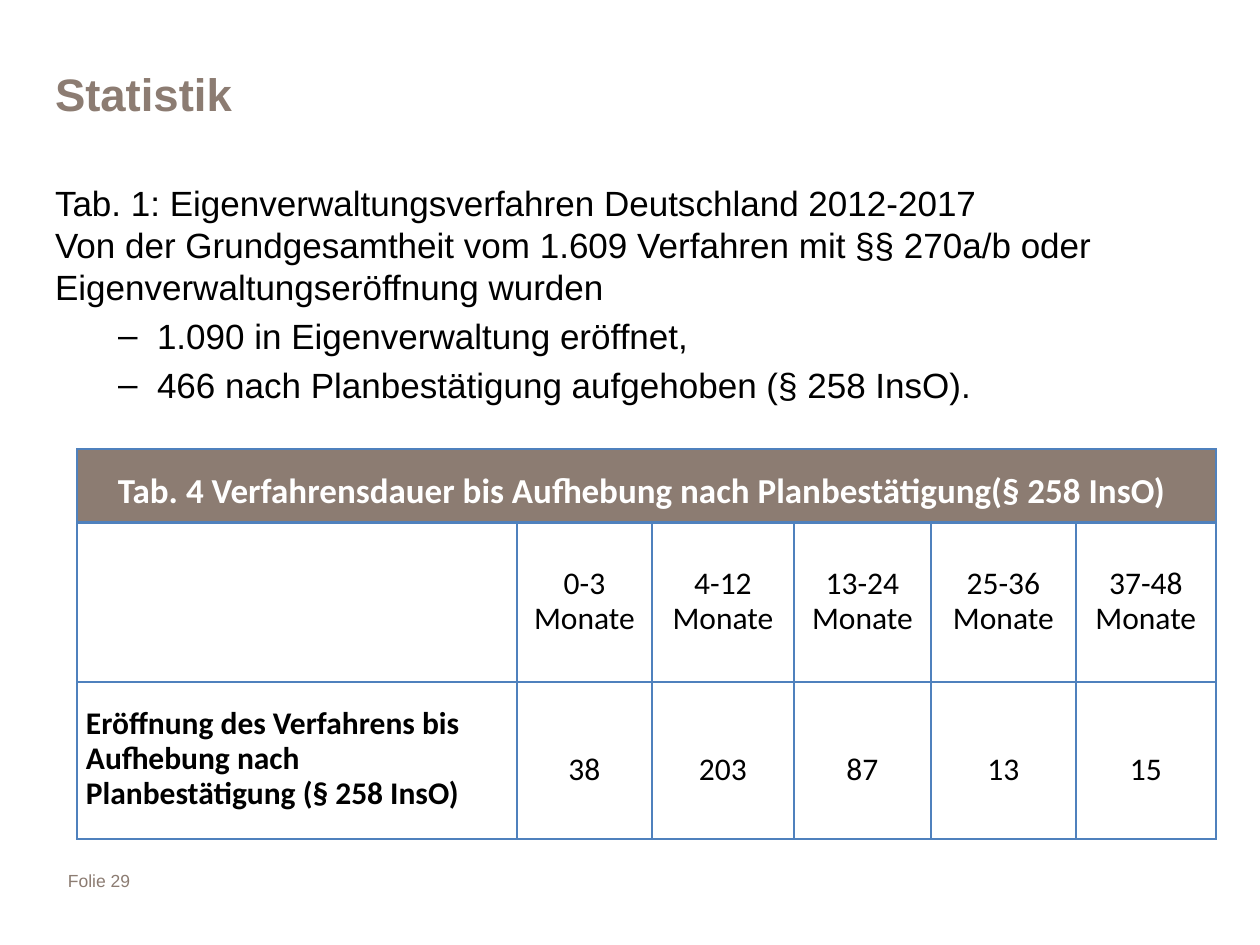
from lxml.etree import SubElement
from pptx import Presentation
from pptx.dml.color import RGBColor
from pptx.enum.text import MSO_ANCHOR, PP_ALIGN
from pptx.oxml import parse_xml
from pptx.oxml.ns import nsdecls, qn
from pptx.util import Emu, Pt

COLORS = {"taupe": "8C7C72", "black": "000000", "white": "FFFFFF", "blue": "4F81BD"}
EMU_PER_PX = 914400 / 126


def px(length):
    return Emu(round(length * EMU_PER_PX))


class SlideBuilder:
    """Holds the style and the current slide, and adds each kind of element."""

    def __init__(self, width, height):
        self.deck = Presentation()
        self.deck.slide_width, self.deck.slide_height = px(width), px(height)
        self.slide = self.deck.slides.add_slide(self.deck.slide_layouts[6])

    def run(self, paragraph, text, size, color="black", bold=False, font="Arial"):
        run = paragraph.add_run()
        run.text = text
        run.font.name, run.font.size, run.font.bold = font, Pt(size), bold
        run.font.color.rgb = RGBColor.from_string(COLORS[color])

    def text_box(self, left, top, width, height, inset=0, anchor=MSO_ANCHOR.TOP):
        frame = self.slide.shapes.add_textbox(
            px(left), px(top), px(width), px(height)).text_frame
        frame.word_wrap = True
        frame.vertical_anchor = anchor
        frame.margin_left, frame.margin_right = px(inset), px(13)
        frame.margin_top = frame.margin_bottom = px(6)
        return frame

    def dash_item(self, frame, text, size):
        item = frame.add_paragraph()
        properties = item._p.get_or_add_pPr()
        properties.set("marL", str(px(102)))
        properties.set("indent", str(px(-39)))
        SubElement(properties, qn("a:buFont")).set("typeface", "Arial")
        SubElement(properties, qn("a:buChar")).set("char", "–")
        item.space_before = Pt(size * 0.2)
        self.run(item, text, size)

    def table(self, left, top, columns, rows):
        table = self.slide.shapes.add_table(
            len(rows), len(columns), px(left), px(top),
            px(sum(columns)), px(sum(rows))).table
        table.first_row = table.horz_banding = False
        for column, width in zip(table.columns, columns):
            column.width = px(width)
        for row, height in zip(table.rows, rows):
            row.height = px(height)
        return table

    def cell_style(self, cell, fill, top=1, bottom=1):
        cell.margin_left = cell.margin_right = px(9)
        cell.margin_top = cell.margin_bottom = 0
        cell.fill.solid()
        cell.fill.fore_color.rgb = RGBColor.from_string(COLORS[fill])
        properties = cell._tc.get_or_add_tcPr()
        sides = {"L": 1, "R": 1, "T": top, "B": bottom}
        for position, (side, width) in enumerate(sides.items()):
            properties.insert(position, parse_xml(
                f'<a:ln{side} {nsdecls("a")} w="{Pt(width)}"><a:solidFill>'
                f'<a:srgbClr val="{COLORS["blue"]}"/></a:solidFill></a:ln{side}>'))

    def cell_text(self, cell, text, align, spacing, size=18, color="black",
                  bold=False, anchor=MSO_ANCHOR.MIDDLE):
        cell.vertical_anchor = anchor
        paragraph = cell.text_frame.paragraphs[0]
        paragraph.alignment, paragraph.line_spacing = align, spacing
        self.run(paragraph, text, size, color, bold, "Calibri")
        return paragraph


def main():
    page = SlideBuilder(1260, 945)

    footer = page.text_box(55, 864, 314, 45, inset=13)
    page.run(footer.paragraphs[0], "Folie 29", 10, "taupe")

    title = page.text_box(55, 34, 1142, 118, anchor=MSO_ANCHOR.MIDDLE)
    page.run(title.paragraphs[0], "Statistik", 26, "taupe", bold=True)

    body = page.text_box(55, 175, 1150, 689)
    intro = body.paragraphs[0]
    page.run(intro, "Tab. 1: Eigenverwaltungsverfahren Deutschland 2012-2017", 20)
    intro.add_line_break()
    page.run(intro, "Von der Grundgesamtheit vom 1.609 Verfahren mit §§ 270a/b oder "
                    "Eigenverwaltungseröffnung wurden", 20)
    for outcome in ("1.090 in Eigenverwaltung eröffnet,",
                    "466 nach Planbestätigung aufgehoben (§ 258 InsO)."):
        page.dash_item(body, outcome, 20)

    durations = page.table(77, 449, [440, 135, 142, 137, 145, 140], [74, 159, 157])
    for cell in durations.rows[0].cells:
        page.cell_style(cell, "taupe", bottom=2)
    for cell in durations.rows[1].cells:
        page.cell_style(cell, "white", top=2)
    for cell in durations.rows[2].cells:
        page.cell_style(cell, "white")

    heading = durations.cell(0, 0)
    heading.merge(durations.cell(0, 5))
    caption = page.cell_text(
        heading, "Tab. 4 Verfahrensdauer bis Aufhebung nach Planbestätigung(§ 258 InsO)",
        PP_ALIGN.JUSTIFY, 1.5, 20, "white", True, MSO_ANCHOR.TOP)
    caption._p.get_or_add_pPr().set("indent", str(px(32)))

    page.cell_text(
        durations.cell(2, 0),
        "Eröffnung des Verfahrens bis Aufhebung nach Planbestätigung (§ 258 InsO)",
        PP_ALIGN.LEFT, Pt(20), bold=True)
    counts = {"0-3": 38, "4-12": 203, "13-24": 87, "25-36": 13, "37-48": 15}
    for column, (months, count) in enumerate(counts.items(), start=1):
        page.cell_text(durations.cell(1, column), f"{months} Monate",
                       PP_ALIGN.CENTER, Pt(20))
        page.cell_text(durations.cell(2, column), str(count), PP_ALIGN.CENTER, 1.5)

    page.deck.save("out.pptx")


if __name__ == "__main__":
    main()
